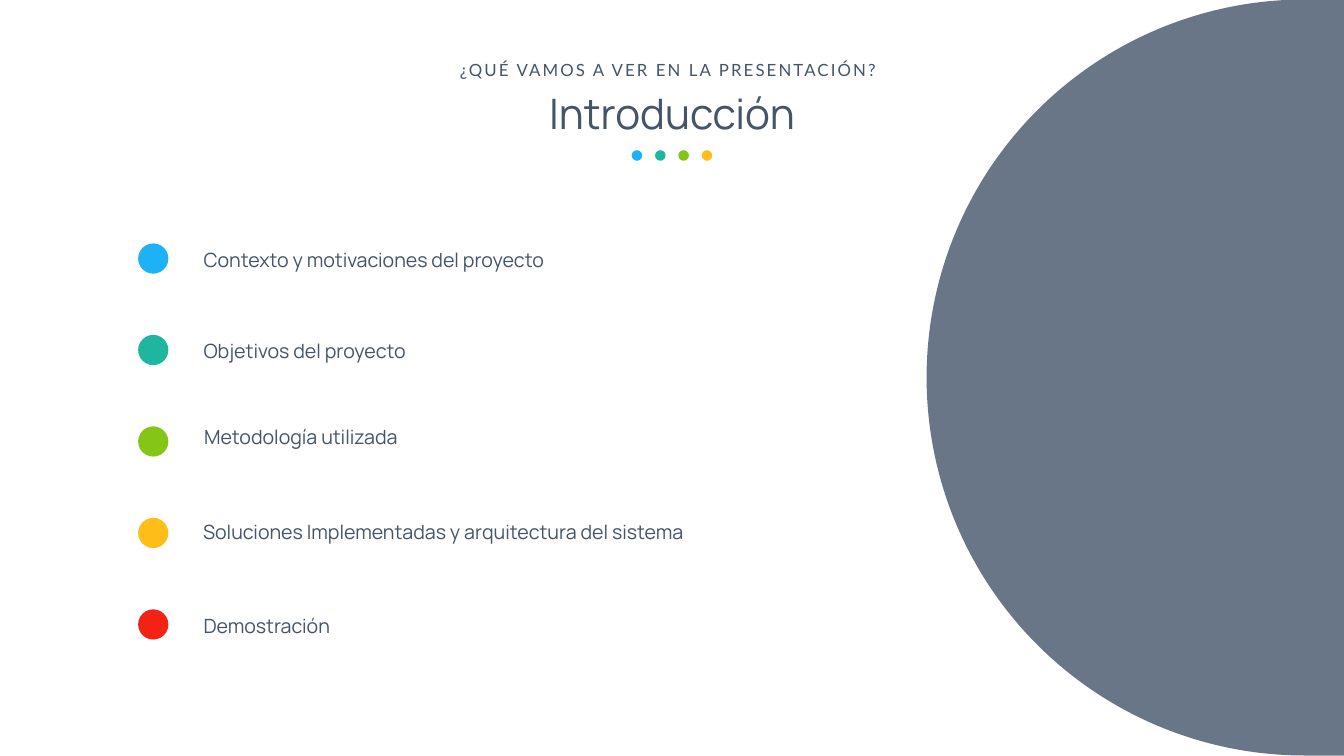
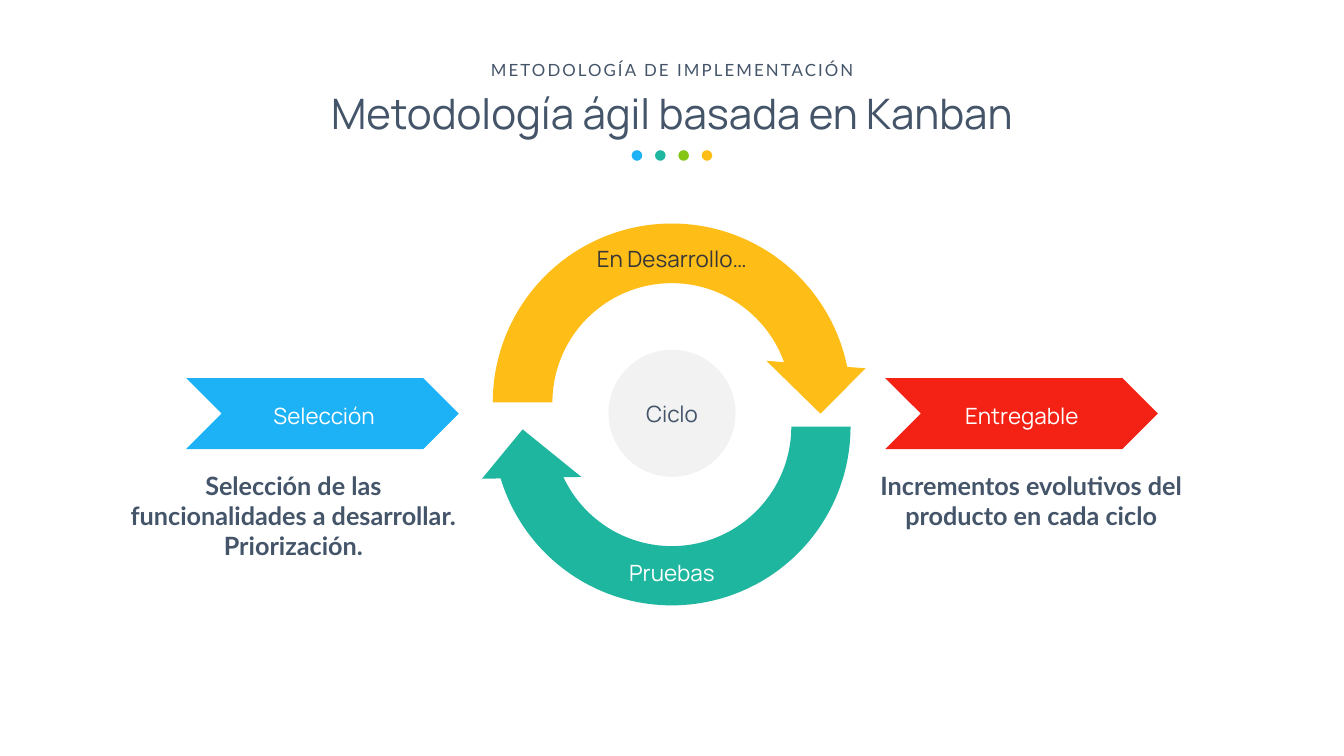
from pptx import Presentation
from pptx.dml.color import RGBColor
from pptx.enum.shapes import MSO_SHAPE
from pptx.enum.text import MSO_AUTO_SIZE, PP_ALIGN
from pptx.oxml.ns import qn
from pptx.util import Inches, Pt
from lxml import etree

OVAL = MSO_SHAPE.OVAL
CHEVRON = MSO_SHAPE.CHEVRON
CIRCULAR_ARROW = MSO_SHAPE.CIRCULAR_ARROW
DELAY = MSO_SHAPE.FLOWCHART_DELAY
FIT_SHAPE = MSO_AUTO_SIZE.SHAPE_TO_FIT_TEXT
LEFT, CENTER = PP_ALIGN.LEFT, PP_ALIGN.CENTER

COLORS = {
    "slate": "445469",
    "blue": "1DB1F5",
    "teal": "1FB69F",
    "green": "85C515",
    "amber": "FEBD17",
    "red": "F32215",
    "pale": "F2F2F2",
    "dark": "373737",
    "white": "FFFFFF",
}
HEADING_FONT, BODY_FONT = "Manrope", "Lato"
ACCENTS = ["blue", "teal", "green", "amber"]


def add_text(shapes, text, box, *, size=32, font=HEADING_FONT, color="slate",
             bold=False, align=CENTER, wrap=True, line_pt=None, spacing_pt=None):
    frame = shapes.add_textbox(*map(Inches, box)).text_frame
    frame.word_wrap = wrap
    frame.auto_size = FIT_SHAPE
    paragraph = frame.paragraphs[0]
    paragraph.alignment = align
    if line_pt:
        paragraph.line_spacing = Pt(line_pt)
    run = paragraph.add_run()
    run.text = text
    run.font.size = Pt(size)
    run.font.name = font
    run.font.bold = bold
    run.font.color.rgb = RGBColor.from_string(COLORS[color])
    if spacing_pt:
        run.font._element.set("spc", str(spacing_pt * 100))


def add_filled(shapes, kind, box, color, rotation=0):
    shape = shapes.add_shape(kind, *map(Inches, box))
    shape.shadow.inherit = False
    shape.fill.solid()
    shape.fill.fore_color.rgb = RGBColor.from_string(COLORS[color])
    shape.line.fill.background()
    shape.rotation = rotation
    return shape


prs = Presentation()
prs.slide_width, prs.slide_height = Inches(26.66), Inches(15)

# Shared header: title, overline and four accent dots
headers = [
    ("Introducción", "¿QUÉ VAMOS A VER EN LA PRESENTACIÓN?", 8.9, 8.7),
    ("Metodología ágil basada en Kanban", "METODOLOGÍA DE IMPLEMENTACIÓN", 9.54, 7.59),
]
slides = []
for title, overline, overline_left, overline_width in headers:
    slide = prs.slides.add_slide(prs.slide_layouts[6])
    slide.background.fill.solid()
    slide.background.fill.fore_color.rgb = RGBColor.from_string(COLORS["white"])
    heading = slide.shapes.add_group_shape().shapes
    add_text(heading, title, (5.3, 1.68, 16.06, 1.11), size=60)
    add_text(heading, overline, (overline_left, 1.13, overline_width, 0.5),
             size=24, font=BODY_FONT, wrap=False, spacing_pt=3)
    dots = slide.shapes.add_group_shape().shapes
    for i, accent in enumerate(ACCENTS):
        add_filled(dots, OVAL, (12.53 + 0.463 * i, 2.98, 0.21, 0.21), accent)
    slides.append(slide)
agenda, method = (slide.shapes for slide in slides)

# Slide 1: agenda topics with evenly spaced bullets
topics = [
    ("Contexto y motivaciones del proyecto", 3.94, 4.73, 17.61),
    ("Objetivos del proyecto", 3.94, 6.55, 15.17),
    ("Metodología utilizada", 3.95, 8.25, 8.58),
    ("Soluciones Implementadas y arquitectura del sistema", 3.93, 10.14, 11.45),
    ("Demostración", 3.94, 12.01, 8.58),
]
first_bullet, last_bullet = 4.83, 12.09
bullet_step = (last_bullet - first_bullet) / (len(topics) - 1)
for i, (topic, left, top, width) in enumerate(topics):
    add_text(agenda, topic, (left, top, width, 0.66), size=28, align=LEFT, line_pt=43)
    add_filled(agenda, OVAL, (2.74, first_bullet + bullet_step * i, 0.6, 0.6),
               [*ACCENTS, "red"][i])

# Slide 1: translucent half-round panel on the right
panel = add_filled(agenda, DELAY, (18.38, -0.01, 15, 15), "slate", rotation=180)
panel_color = panel.fill._xPr.find(".//" + qn("a:srgbClr"))
etree.SubElement(panel_color, qn("a:alpha")).set("val", "80000")

# Slide 2: the two arrows of the cycle
cycle = method.add_group_shape().shapes
for top, color, rotation, thickness, end_angle in [
    (4.04, "amber", 0, 0.15, 207.17),
    (4.52, "teal", 180, 0.149, 203.95),
]:
    arrow = add_filled(cycle, CIRCULAR_ARROW, (9.38, top, 7.89, 7.89), color, rotation)
    for i, value in enumerate([thickness, 11.42, end_angle, 108, 0.125]):
        arrow.adjustments[i] = value

# Slide 2: input and output chevrons with their explanations
for label, color, left, label_left, detail, detail_left, detail_width in [
    ("Selección", "blue", 3.69, 4.33,
     "Selección de las funcionalidades a desarrollar. Priorización.", 2.26, 7.12),
    ("Entregable", "red", 17.56, 18.17,
     "Incrementos evolutivos del producto en cada ciclo", 17.28, 6.35),
]:
    add_filled(method, CHEVRON, (left, 7.5, 5.41, 1.41), color)
    add_text(method, label, (label_left, 7.92, 4.2, 0.64), color="white")
    add_text(method, detail, (detail_left, 9.28, detail_width, 1.31),
             size=36, font=BODY_FONT, bold=True)

# Slide 2: hub and labels of the cycle
add_filled(method, OVAL, (12.07, 6.94, 2.52, 2.52), "pale")
for label, top, color in [
    ("En Desarrollo…", 4.81, "dark"),
    ("Ciclo", 7.88, "slate"),
    ("Pruebas", 11.04, "white"),
]:
    add_text(method, label, (11.23, top, 4.2, 0.64), color=color)

prs.save("out.pptx")
